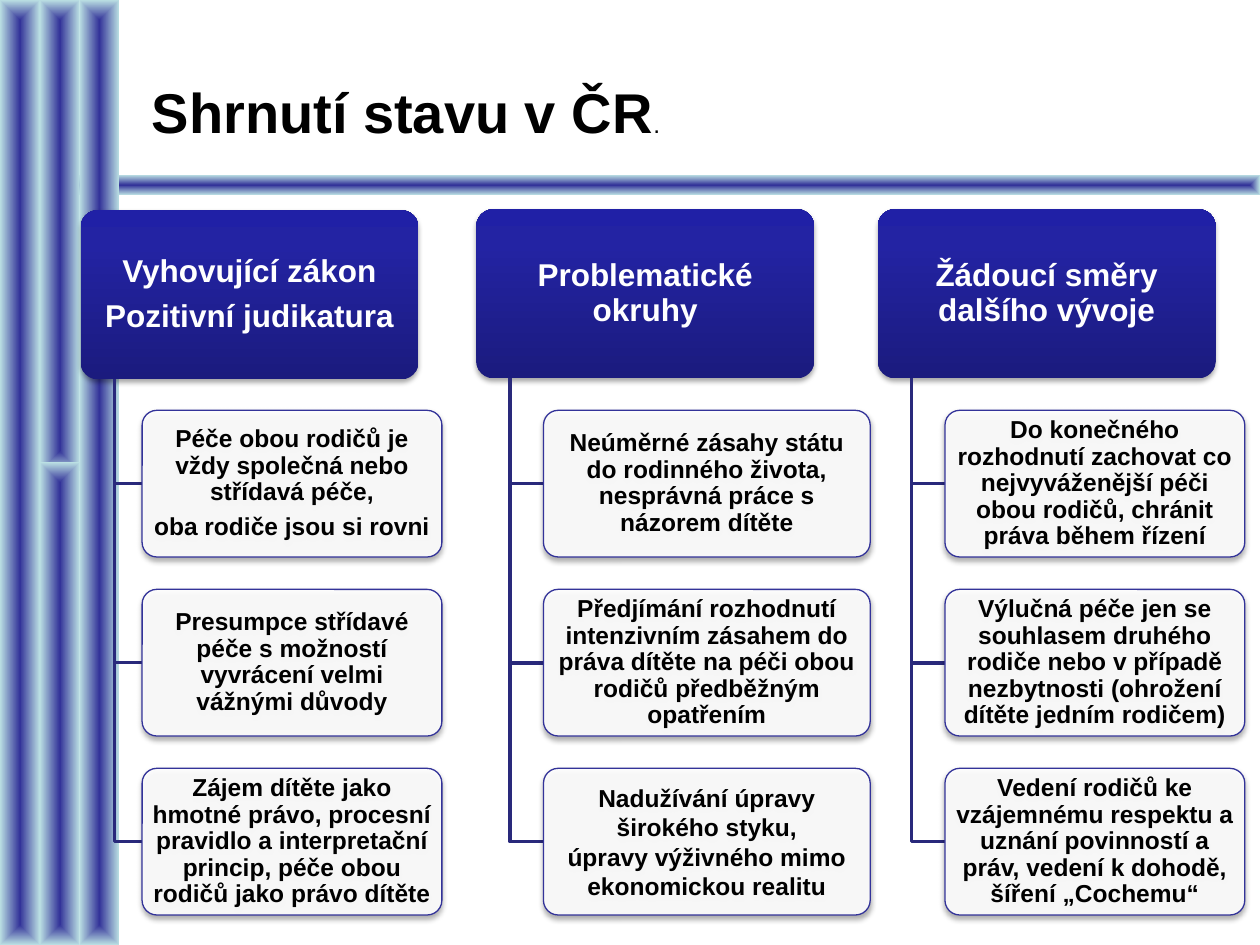
from lxml import etree
from pptx import Presentation
from pptx.dml.color import RGBColor
from pptx.enum.shapes import MSO_SHAPE
from pptx.enum.text import MSO_ANCHOR, PP_ALIGN
from pptx.oxml import parse_xml
from pptx.oxml.ns import nsdecls, qn
from pptx.util import Pt

RECT, ROUNDED = MSO_SHAPE.RECTANGLE, MSO_SHAPE.ROUNDED_RECTANGLE
MIDDLE, CENTER = MSO_ANCHOR.MIDDLE, PP_ALIGN.CENTER

COLORS = {"core": "333399", "edge": "BBE0E3", "dark": "1B1B7E", "mid": "2323A3",
          "bright": "2020A6", "stem": "29297B", "white": "FFFFFF", "black": "000000"}
FONT = "Arial"

TITLE = [("Shrnutí stavu v ČR", 32, True), (".", 14, False)]
# Decorative bars: left, top, width, height
BARS = [(0, 100, 720, 11.5), (0, 0, 22.8, 540), (45.4, 0, 22.8, 540),
        (22.8, 0, 22.8, 269.3), (22.8, 264.2, 22.8, 275.8)]
# Each card is (paragraphs, tight), where tight means 90 % lines with gaps between
COLUMNS = [
    {"left": 46.1, "top": 120.2, "card_left": 81.2, "card_width": 171.3,
     "heading": ["Vyhovující zákon", "Pozitivní judikatura"],
     "cards": [
         (["Péče obou rodičů je vždy společná nebo střídavá péče,",
           "oba rodiče jsou si rovni"], True),
         (["Presumpce střídavé péče s možností vyvrácení velmi vážnými důvody"], True),
         (["Zájem dítěte jako hmotné právo, procesní pravidlo a interpretační "
           "princip, péče obou rodičů jako právo dítěte"], True)]},
    {"left": 272.2, "top": 119.6, "card_left": 310.6, "card_width": 186.7,
     "heading": ["Problematické okruhy"],
     "cards": [
         (["Neúměrné zásahy státu do rodinného života, nesprávná práce s "
           "názorem dítěte"], True),
         (["Předjímání rozhodnutí intenzivním zásahem do práva dítěte na péči "
           "obou rodičů předběžným opatřením"], True),
         (["Nadužívání úpravy širokého styku,",
           "úpravy výživného mimo ekonomickou realitu"], False)]},
    {"left": 501.6, "top": 119.6, "card_left": 540, "card_width": 171.3,
     "heading": ["Žádoucí směry dalšího vývoje"],
     "cards": [
         (["Do konečného rozhodnutí zachovat co nejvyváženější péči obou rodičů, "
           "chránit práva během řízení"], True),
         (["Výlučná péče jen se souhlasem druhého rodiče nebo v případě "
           "nezbytnosti (ohrožení dítěte jedním rodičem)"], True),
         (["Vedení rodičů ke vzájemnému respektu a uznání povinností a práv, "
           "vedení k dohodě, šíření „Cochemu“"], True)]},
]
HEAD_W, HEAD_H = 193, 96.6
STEM_INSET = HEAD_W / 10
CARD_TOP, CARD_H, CARD_PITCH = 234.5, 83.8, 102.3


def rgb(name):
    return RGBColor.from_string(COLORS[name])


def set_gradient(shape, stops, direction):
    """Fill with (percent, colour name) stops; direction is the a:lin or a:path XML."""
    stop_xml = "".join(f'<a:gs pos="{pos * 1000}"><a:srgbClr val="{COLORS[name]}"/></a:gs>'
                       for pos, name in stops)
    shape.fill.solid()
    solid = shape._element.spPr.find(qn("a:solidFill"))
    solid.getparent().replace(solid, parse_xml(
        f'<a:gradFill {nsdecls("a")} rotWithShape="1"><a:gsLst>{stop_xml}</a:gsLst>'
        f'{direction}</a:gradFill>'))


def add_shadow(shape):
    shape._element.spPr.find(qn("a:effectLst")).append(parse_xml(
        f'<a:outerShdw {nsdecls("a")} blurRad="{Pt(3.1)}" dist="{Pt(1.8)}" dir="5400000" '
        f'rotWithShape="0"><a:srgbClr val="{COLORS["black"]}"><a:alpha val="35000"/>'
        '</a:srgbClr></a:outerShdw>'))


def add_plain(slide, preset, *box):
    shape = slide.shapes.add_shape(preset, *map(Pt, box))
    shape.shadow.inherit = False
    shape.line.fill.background()
    return shape


def style_run(paragraph, text, size, color, bold=True):
    run = paragraph.add_run()
    run.text = text
    run.font.name, run.font.size, run.font.bold = FONT, Pt(size), bold
    run.font.color.rgb = rgb(color)


def set_frame(frame, left, top, right, bottom):
    frame.word_wrap = True
    frame.vertical_anchor = MIDDLE
    frame.margin_left, frame.margin_top = Pt(left), Pt(top)
    frame.margin_right, frame.margin_bottom = Pt(right), Pt(bottom)


def add_rounded(slide, box, paragraphs, size, color, insets, tight=True):
    shape = add_plain(slide, ROUNDED, *box)
    shape.adjustments[0] = 0.1
    add_shadow(shape)
    frame = shape.text_frame
    set_frame(frame, *insets, *insets)
    for i, text in enumerate(paragraphs):
        paragraph = frame.paragraphs[0] if i == 0 else frame.add_paragraph()
        paragraph.alignment = CENTER
        paragraph.line_spacing = 0.9 if tight else 1.0
        paragraph.space_after = Pt(round(size * 0.35, 1) if tight else 0)
        style_run(paragraph, text, size, color)
    return shape


def add_elbow(slide, x, top, card_left, middle):
    builder = slide.shapes.build_freeform(Pt(x), Pt(top))
    builder.add_line_segments([(Pt(x), Pt(middle)), (Pt(card_left), Pt(middle))], close=False)
    elbow = builder.convert_to_shape()
    elbow.shadow.inherit = False
    elbow.fill.background()
    elbow.line.color.rgb = rgb("stem")
    elbow.line.width = Pt(2)


def add_card(slide, box, paragraphs, tight):
    card = add_rounded(slide, box, paragraphs, 14, "black", (2.1, 1.4), tight)
    card.fill.solid()
    card.fill.fore_color.rgb = rgb("white")
    fill_color = card._element.spPr.find(qn("a:solidFill"))[0]
    etree.SubElement(fill_color, qn("a:alpha")).set("val", "90000")
    card.line.color.rgb = rgb("core")
    card.line.width = Pt(0.75)


def add_column(slide, column):
    heading = add_rounded(slide, (column["left"], column["top"], HEAD_W, HEAD_H),
                          column["heading"], 18, "white", (2.7, 1.8))
    set_gradient(heading, [(0, "dark"), (80, "mid"), (100, "bright")],
                 '<a:lin ang="16200000" scaled="0"/>')
    for row, (paragraphs, tight) in enumerate(column["cards"]):
        top = CARD_TOP + row * CARD_PITCH
        add_elbow(slide, column["left"] + STEM_INSET, column["top"] + HEAD_H,
                  column["card_left"], top + CARD_H / 2)
        add_card(slide, (column["card_left"], top, column["card_width"], CARD_H),
                 paragraphs, tight)


def main():
    prs = Presentation()
    prs.slide_width, prs.slide_height = Pt(720), Pt(540)
    slide = prs.slides.add_slide(prs.slide_layouts[6])

    for bar in BARS:
        set_gradient(add_plain(slide, RECT, *bar), [(0, "core"), (100, "edge")],
                     '<a:path path="rect"><a:fillToRect l="50000" t="50000" r="50000" '
                     'b="50000"/></a:path>'.replace('"rect"', '"shape"'))

    title = slide.shapes.add_textbox(Pt(65.5), Pt(0), Pt(654.5), Pt(106)).text_frame
    set_frame(title, 21.2, 24.6, 7.2, 3.6)
    for text, size, bold in TITLE:
        style_run(title.paragraphs[0], text, size, "black", bold)

    for column in COLUMNS:
        add_column(slide, column)
    prs.save("out.pptx")


if __name__ == "__main__":
    main()
